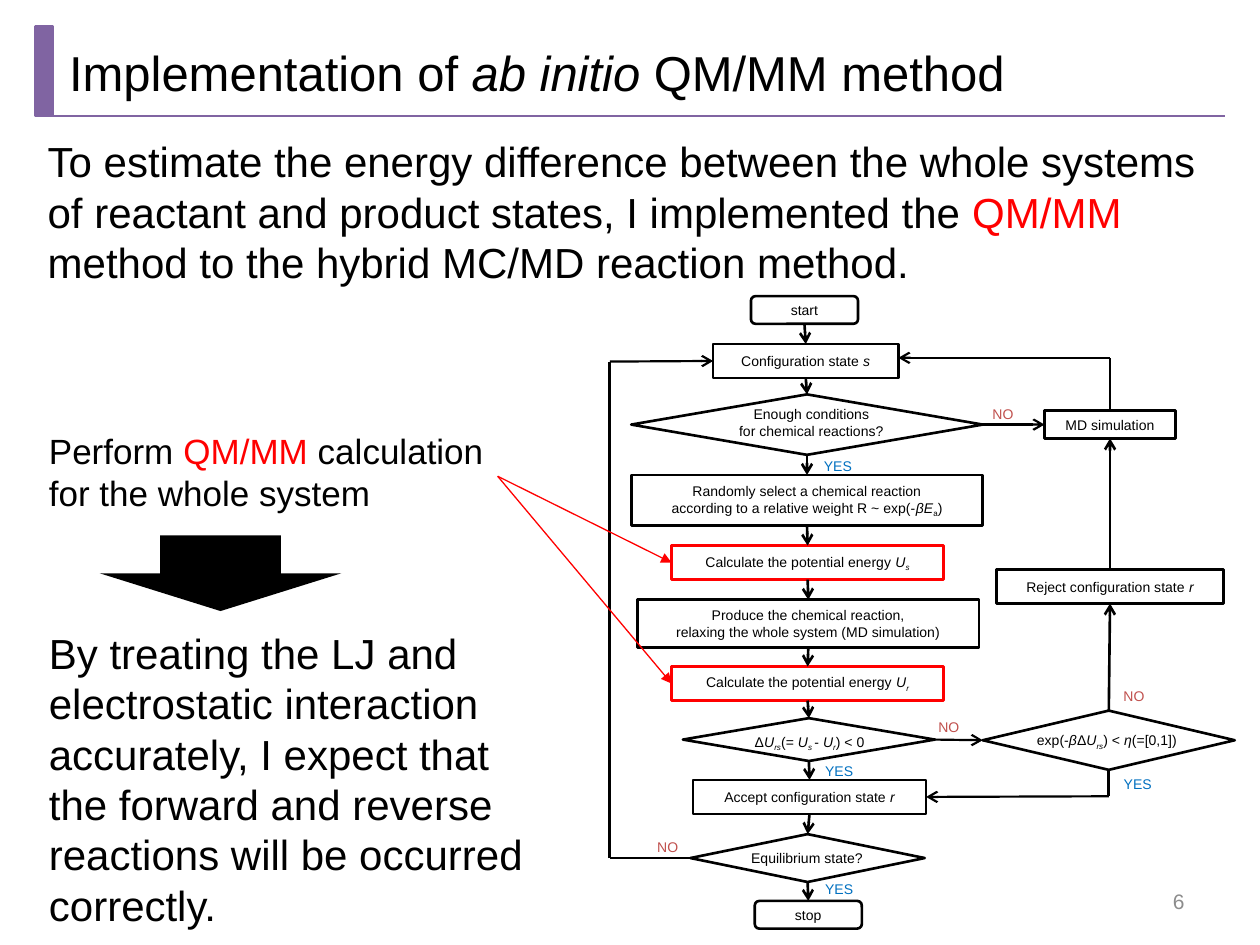
import dataclasses
import typing

import pptx
import pptx.dml.color
import pptx.enum.shapes
import pptx.enum.text
import pptx.oxml
import pptx.oxml.ns
import pptx.util

COLS, ROWS = 100, 75
BLACK, RED, BLUE, ROSE, PLUM, GREY = "000000", "FF0000", "0070C0", "C0504D", "8064A2", "8C8C8C"
Kind = pptx.enum.shapes.MSO_SHAPE
Align = pptx.enum.text.PP_ALIGN
Anchor = pptx.enum.text.MSO_ANCHOR
TOP, LEFT, BOTTOM, RIGHT = range(4)
CELL = pptx.util.Inches(10) // COLS


@dataclasses.dataclass
class Run:
    text: str
    hue: str = BLACK
    slant: bool = False
    sub: bool = False


Lines = list[list[Run]]
End = tuple[typing.Any, float]


@dataclasses.dataclass
class Node:
    name: str
    kind: Kind
    area: tuple[float, float, float, float]
    lines: Lines = dataclasses.field(default_factory=list)
    hue: str = BLACK


@dataclasses.dataclass
class Note:
    area: tuple[float, float, float, float]
    lines: Lines
    size: float = 8
    align: Align = Align.CENTER
    anchor: Anchor = Anchor.TOP


@dataclasses.dataclass
class Link:
    start: End
    end: End
    tip: str = "arrow"
    hue: str = BLACK
    width: float = 1.5


def grid(*cells: float) -> list[int]:
    return [round(cell * CELL) for cell in cells]


def tint(hue: str) -> pptx.dml.color.RGBColor:
    return pptx.dml.color.RGBColor.from_string(hue)


def var(text: str) -> Run:
    return Run(text, slant=True)


def low(text: str) -> Run:
    return Run(text, slant=True, sub=True)


def write(frame, lines: Lines, size: float, align: Align, anchor: Anchor) -> None:
    frame.word_wrap = True
    frame.vertical_anchor = anchor
    for row, line in enumerate(lines):
        para = frame.add_paragraph() if row else frame.paragraphs[0]
        para.alignment = align
        for part in line:
            run = para.add_run()
            run.text = part.text
            run.font.name = "Arial"
            run.font.size = pptx.util.Pt(size)
            run.font.italic = part.slant
            run.font.color.rgb = tint(part.hue)
            if part.sub:
                run.font._element.set("baseline", "-25000")


def draw_note(slide, note: Note) -> None:
    box = slide.shapes.add_textbox(*grid(*note.area))
    write(box.text_frame, note.lines, note.size, note.align, note.anchor)


def draw_node(slide, node: Node, solid: bool = False):
    shape = slide.shapes.add_shape(node.kind, *grid(*node.area))
    shape.shadow.inherit = False
    if solid:
        shape.fill.solid()
        shape.fill.fore_color.rgb = tint(node.hue)
    else:
        shape.fill.background()
    shape.line.color.rgb = tint(node.hue)
    shape.line.width = pptx.util.Pt(1.5)
    write(shape.text_frame, node.lines, 8, Align.CENTER, Anchor.MIDDLE)
    return shape


def draw_link(slide, link: Link, nodes: dict) -> None:
    ends = (link.start, link.end)
    spots = [(0, 0) if isinstance(end[0], str) else grid(*end) for end in ends]
    line = slide.shapes.add_connector(
        pptx.enum.shapes.MSO_CONNECTOR.STRAIGHT, *spots[0], *spots[1])
    for end, join in zip(ends, (line.begin_connect, line.end_connect)):
        if isinstance(end[0], str):
            join(nodes[end[0]], end[1])
    line.line.color.rgb = tint(link.hue)
    line.line.width = pptx.util.Pt(link.width)
    if link.tip:
        tail = pptx.oxml.parse_xml(
            f'<a:tailEnd {pptx.oxml.ns.nsdecls("a")} type="{link.tip}"/>')
        line.line._get_or_add_ln().append(tail)
    flat = pptx.oxml.parse_xml(f'<a:effectLst {pptx.oxml.ns.nsdecls("a")}/>')
    line._element.spPr.append(flat)


def energy(state: str) -> Lines:
    return [[Run("Calculate the potential energy "), var("U"), low(state)]]


def state(verb: str, name: str) -> Lines:
    return [[Run(verb + " state "), var(name)]]


BOX, OVAL, TEST = Kind.RECTANGLE, Kind.ROUNDED_RECTANGLE, Kind.FLOWCHART_DECISION
CHAIN = [
    Node("start", OVAL, (59.6, 23.5, 8.5, 2.2), [[Run("start")]]),
    Node("config", BOX, (56.6, 27.3, 14.7, 2.7), state("Configuration", "s")),
    Node("enough", TEST, (50.1, 31.3, 27.9, 4.8)),
    Node("pick", BOX, (50.1, 37.7, 27.9, 4), [
        [Run("Randomly select a chemical reaction")],
        [Run("according to a relative weight R ~ exp(-"), var("βE"), Run("a", sub=True), Run(")")]]),
    Node("before", BOX, (53.3, 43.3, 21.6, 2.7), energy("s"), RED),
    Node("react", BOX, (50.6, 47.6, 27.1, 3.8), [
        [Run("Produce the chemical reaction,")],
        [Run("relaxing the whole system (MD simulation)")]]),
    Node("after", BOX, (53.3, 52.9, 21.6, 2.7), energy("r"), RED),
    Node("drop", TEST, (54.2, 57, 20, 3.4)),
    Node("accept", BOX, (55, 61.9, 18.5, 2.7), state("Accept configuration", "r")),
    Node("stable", TEST, (54.8, 66.2, 18.6, 3.8)),
    Node("stop", OVAL, (59.9, 71.5, 8.5, 2.2), [[Run("stop")]]),
]
SIDE = [
    Node("md", BOX, (82.9, 32.6, 10.4, 2.2), [[Run("MD simulation")]]),
    Node("reject", BOX, (79.1, 45.2, 18, 2.7), state("Reject configuration", "r")),
    Node("chance", TEST, (78, 56.4, 20, 4.7)),
]
LINKS = [Link((a.name, BOTTOM), (b.name, TOP)) for a, b in zip(CHAIN, CHAIN[1:])] + [
    Link(("enough", RIGHT), ("md", LEFT), width=1.25),
    Link(("drop", RIGHT), ("chance", LEFT), width=1.25),
    Link(("chance", TOP), ("reject", BOTTOM)),
    Link(("reject", TOP), ("md", BOTTOM)),
    Link(("md", TOP), (88.1, 28.4), ""),
    Link((88.1, 28.4), (71.3, 28.4), width=1.25),
    Link(("chance", BOTTOM), (88, 63.2), ""),
    Link((88, 63.2), ("accept", RIGHT), width=1.25),
    Link(("stable", LEFT), (48.4, 68.1), "", width=1.25),
    Link((48.4, 68.1), (48.4, 28.7), ""),
    Link((48.4, 28.7), ("config", LEFT), width=1.25),
] + [Link((39.5, 37.8), (name, LEFT), "triangle", RED, 0.75) for name in ("before", "after")]
TAGS = {
    ("YES", BLUE): [(64.1, 35.8), (64.2, 60), (87.9, 61.1), (64.2, 69.4)],
    ("NO", ROSE): [(77.2, 31.7), (72.9, 56.5), (87.6, 54.1), (50.6, 66.1)],
}
NOTES = [
    Note((53.8, 31.7, 21.2, 3.7), [[Run("Enough conditions")], [Run("for chemical reactions?")]]),
    Note((57.3, 57.7, 13.9, 2.4), [[
        Run("Δ"), var("U"), low("rs"), Run("(= "), var("U"), low("s "),
        Run("- "), var("U"), low("r"), Run(") < 0")]]),
    Note((78.6, 57.6, 18.5, 2.4), [[
        Run("exp(-"), var("β"), Run("Δ"), var("U"), low("rs"),
        Run(") < "), var("η"), Run("(=[0,1])")]]),
    Note((56.1, 66.9, 15.9, 2.4), [[Run("Equilibrium state?")]]),
    Note((4.5, 2.9, 92.8, 6.1), [[
        Run("Implementation of "), var("ab initio"), Run(" QM/MM method")]], 28, Align.LEFT),
    Note((2.8, 10.3, 94.5, 13.1), [[
        Run("To estimate the energy difference between the whole systems of reactant "
            "and product states, I implemented the "),
        Run("QM/MM ", RED), Run("method to the hybrid MC/MD reaction method.")]], 24, Align.LEFT),
    Note((2.9, 33.6, 36.6, 8.4), [
        [Run("Perform "), Run("QM/MM", RED), Run(" calculation")],
        [Run("for the whole system")]], 20, Align.LEFT),
    Note((2.9, 49.3, 42.4, 25.7), [[
        Run("By treating the LJ and electrostatic interaction accurately, I expect that "
            "the forward and reverse reactions will be occurred correctly.")]], 24, Align.LEFT),
    Note((71.7, 69.5, 23.3, 4), [[Run("6", GREY)]], 12, Align.RIGHT, Anchor.MIDDLE),
]


def main() -> None:
    deck = pptx.Presentation()
    deck.slide_width, deck.slide_height = grid(COLS, ROWS)
    slide = deck.slides.add_slide(deck.slide_layouts[6])
    draw_node(slide, Node("bar", BOX, (2.8, 2.1, 1.4, 7.1), hue=PLUM), True)
    draw_node(slide, Node("down", Kind.DOWN_ARROW, (7.9, 42.5, 19.2, 6), hue=BLACK), True).line.fill.background()
    draw_link(slide, Link((3.9, 9.2), (97.2, 9.2), "", PLUM, 1), {})
    nodes = {node.name: draw_node(slide, node) for node in CHAIN + SIDE}
    for link in LINKS:
        draw_link(slide, link, nodes)
    tags = [Note((*spot, 4.8, 2.4), [[Run(*tag)]]) for tag, spots in TAGS.items() for spot in spots]
    for note in NOTES + tags:
        draw_note(slide, note)
    deck.save("out.pptx")


if __name__ == "__main__":
    main()
